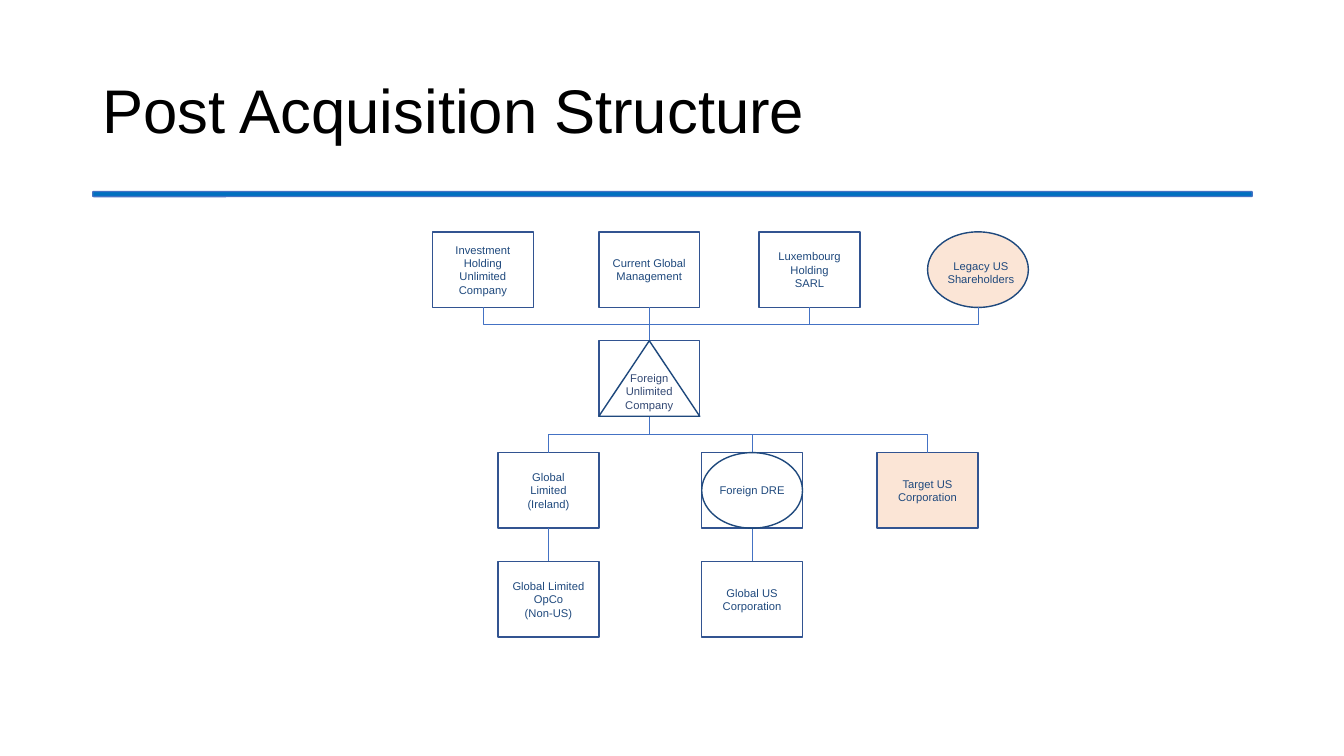
from dataclasses import dataclass

from lxml.etree import SubElement
from pptx import Presentation
from pptx.dml.color import RGBColor
from pptx.enum.shapes import MSO_CONNECTOR, MSO_SHAPE
from pptx.enum.text import MSO_ANCHOR, PP_ALIGN
from pptx.oxml.ns import qn
from pptx.util import Inches, Pt

# Grid in inches: centre of each column, top of each row
COLS = dict(investment=4.79, ireland=5.44, parent=6.44, dre=7.46,
            luxembourg=8.03, target=9.2, legacy=9.7)
ROWS = (2.3, 3.38, 4.49, 5.57)
BOX_W, BOX_H = 1, 0.75
MARGIN, CONTENT_W = 0.92, 11.5

BLACK, WHITE, PEACH = "000000", "FFFFFF", "FBE5D6"
NAVY, EDGE, SLATE = "1F497D", "325491", "324873"
BLUE, BAR = "4472C4", "0070C0"


@dataclass(frozen=True)
class Node:
    name: str
    col: str
    row: int
    text: str = ""
    shape: MSO_SHAPE = MSO_SHAPE.RECTANGLE
    fill: str | None = None
    line: str = EDGE
    color: str = NAVY
    bottom: float = 0.05


@dataclass(frozen=True)
class Link:
    upper: str
    lower: str


NODES = (
    Node("management", "parent", 0, "Current Global Management"),
    Node("investment", "investment", 0, "Investment Holding Unlimited Company"),
    Node("luxembourg", "luxembourg", 0, "Luxembourg Holding\nSARL"),
    Node("legacy", "legacy", 0, shape=MSO_SHAPE.OVAL, fill=PEACH, line=NAVY),
    Node("parent", "parent", 1),
    Node("ireland", "ireland", 2, "Global\nLimited\n(Ireland)"),
    Node("dre", "dre", 2, "Foreign DRE"),
    Node("target", "target", 2, "Target US Corporation", fill=PEACH),
    Node("opco", "ireland", 3, "Global Limited\nOpCo\n(Non-US)"),
    Node("us", "dre", 3, "Global US Corporation"),
)
LINKS = (
    Link("investment", "parent"), Link("management", "parent"),
    Link("luxembourg", "parent"), Link("legacy", "parent"),
    Link("parent", "ireland"), Link("parent", "dre"), Link("parent", "target"),
    Link("ireland", "opco"), Link("dre", "us"),
)
OVERLAYS = (
    Node("triangle", "parent", 1, "Foreign\nUnlimited\nCompany",
         MSO_SHAPE.ISOSCELES_TRIANGLE, WHITE, NAVY, SLATE, bottom=0.17),
    Node("oval", "dre", 2, shape=MSO_SHAPE.OVAL, line=NAVY),
)


def rgb(value: str) -> RGBColor:
    return RGBColor.from_string(value)


def write(sp, text: str, color: str, size: float = 8,
          align=PP_ALIGN.CENTER, **frame_format) -> None:
    """Fill a text frame, one paragraph per line of text."""
    tf = sp.text_frame
    settings = dict(word_wrap=True, vertical_anchor=MSO_ANCHOR.MIDDLE)
    for key, value in (settings | frame_format).items():
        setattr(tf, key, value)
    for i, line in enumerate(text.split("\n")):
        p = tf.add_paragraph() if i else tf.paragraphs[0]
        p.alignment = align
        r = p.add_run()
        r.text = line
        for key, value in dict(name="Arial", size=Pt(size)).items():
            setattr(r.font, key, value)
        r.font.color.rgb = rgb(color)


def add_outlined(s, shape, box, fill: str | None, line: str):
    sp = s.shapes.add_shape(shape, *map(Inches, box))
    sp.shadow.inherit = False
    if fill:
        sp.fill.solid()
        sp.fill.fore_color.rgb = rgb(fill)
    else:
        sp.fill.background()
    sp.line.color.rgb = rgb(line)
    sp.line.width = Pt(1)
    return sp


def add_node(s, node: Node):
    box = (COLS[node.col] - BOX_W / 2, ROWS[node.row], BOX_W, BOX_H)
    sp = add_outlined(s, node.shape, box, node.fill, node.line)
    if node.text:
        write(sp, node.text, node.color, margin_bottom=Inches(node.bottom),
              word_wrap=node.shape == MSO_SHAPE.RECTANGLE)
    return sp


def add_link(s, upper, lower) -> None:
    """Join a bottom side to a top side, with a bend if they are not in line."""
    x1, y1 = upper.left + upper.width // 2, upper.top + upper.height
    x2, y2 = lower.left + lower.width // 2, lower.top
    straight = x1 == x2
    kind = MSO_CONNECTOR.STRAIGHT if straight else MSO_CONNECTOR.ELBOW
    cx = s.shapes.add_connector(kind, x1, y1, x2, y2)
    cx.line.color.rgb = rgb(BLUE)
    cx.line.width = Pt(0.5)
    SubElement(cx._element.spPr, qn("a:effectLst"))
    if upper.auto_shape_type == MSO_SHAPE.RECTANGLE:
        cx.begin_connect(upper, 2)
    cx.end_connect(lower, 0)
    if straight:
        return
    # A quarter turn makes the elbow leave and arrive vertically
    w, h = y2 - y1, abs(x2 - x1)
    place = dict(left=(x1 + x2 - w) // 2, top=(y1 + y2 - h) // 2,
                 width=w, height=h)
    for key, value in place.items():
        setattr(cx, key, value)
    xfrm = cx._element.spPr.find(qn("a:xfrm"))
    turn = dict(rot="5400000", flipH="0", flipV="1" if x2 > x1 else "0")
    for key, value in turn.items():
        xfrm.set(key, value)


def main() -> None:
    prs = Presentation()
    prs.slide_width, prs.slide_height = Inches(13.33), Inches(7.5)
    s = prs.slides.add_slide(prs.slide_layouts[6])

    add_outlined(s, MSO_SHAPE.ROUNDED_RECTANGLE,
                 (MARGIN, 1.9, CONTENT_W, 0.05), BAR, BLUE)
    title = s.shapes.add_textbox(*map(Inches, (MARGIN, 0.4, CONTENT_W, 1.45)))
    write(title, "Post Acquisition Structure", BLACK, 44, PP_ALIGN.LEFT)
    title.text_frame.paragraphs[0].line_spacing = 0.9

    shapes = {node.name: add_node(s, node) for node in NODES}
    for link in LINKS:
        add_link(s, shapes[link.upper], shapes[link.lower])
    for node in OVERLAYS:
        add_node(s, node)

    label = s.shapes.add_textbox(*map(Inches, (9, 2.52, 1.46, 0.37)))
    write(label, "Legacy US\nShareholders", NAVY,
          vertical_anchor=MSO_ANCHOR.TOP)
    prs.save("out.pptx")


if __name__ == "__main__":
    main()
